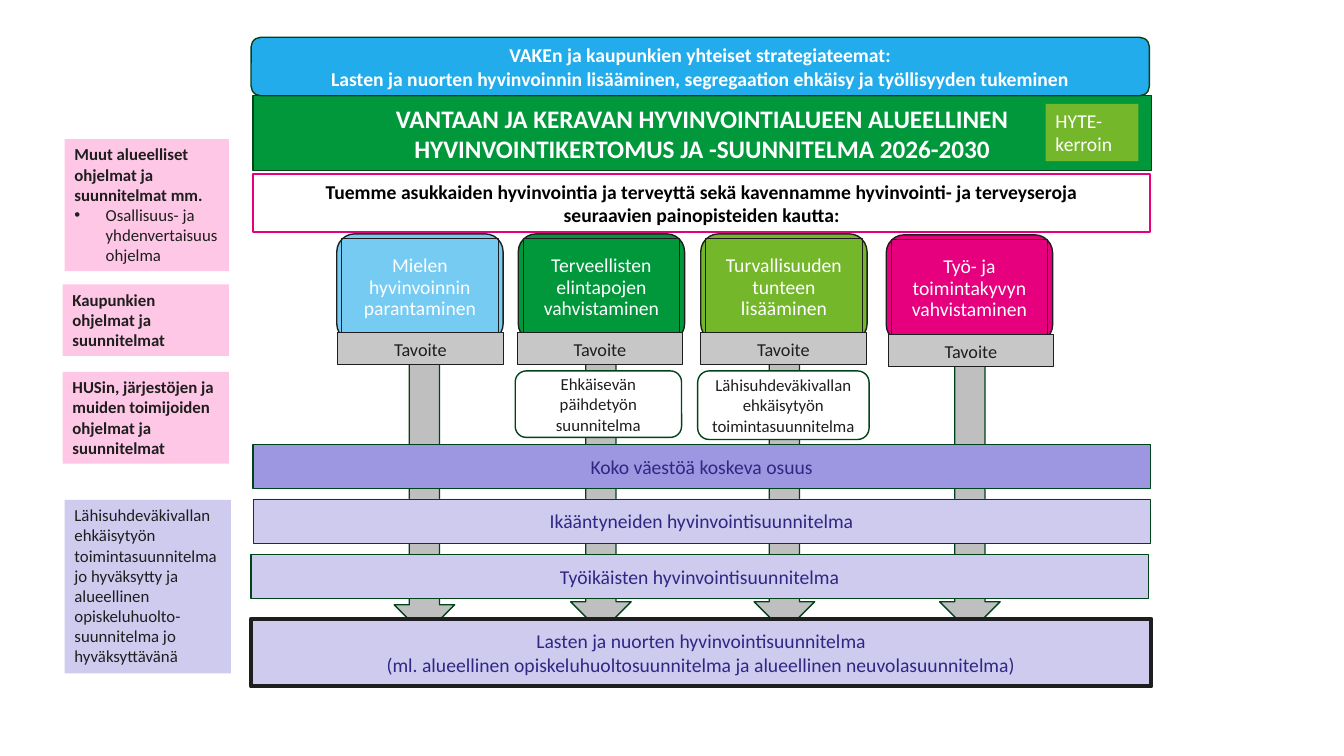
from dataclasses import dataclass

import pptx
import pptx.dml.color
import pptx.enum.shapes
import pptx.enum.text
import pptx.oxml
import pptx.oxml.ns
import pptx.util
from lxml import etree
from pptx.util import Inches

KIND = pptx.enum.shapes.MSO_SHAPE
ALIGN = pptx.enum.text.PP_ALIGN
ANCHOR = pptx.enum.text.MSO_ANCHOR


@dataclass(frozen=True)
class Theme:
    font: str = "Calibri"
    white: str = "FFFFFF"
    black: str = "000000"
    ink: str = "1E1E1E"
    edge: str = "004319"
    sky: str = "76CBF3"
    blue: str = "23ACEC"
    green: str = "00983A"
    lime: str = "74B72B"
    rose: str = "E6007E"
    pink: str = "FFC7E6"
    lilac: str = "CECBEF"
    violet: str = "9D96E0"
    navy: str = "302783"
    silver: str = "C7C7C7"
    grey: str = "BFBFBF"
    head: int = 18
    main: int = 14
    goal: int = 13
    note: int = 12


@dataclass(frozen=True)
class Column:
    text: str
    fill: str
    card: tuple
    goal: tuple
    arrow: tuple


T = Theme()

COLUMNS = [
    Column("Mielen hyvinvoinnin parantaminen", T.sky,
           (3.34, 2.32), (3.35, 3.3), (3.91, 3.43)),
    Column("Terveellisten elintapojen vahvistaminen", T.green,
           (5.14, 2.32), (5.13, 3.3), (5.66, 3.4)),
    Column("Turvallisuuden tunteen lisääminen", T.lime,
           (6.95, 2.32), (6.95, 3.3), (7.48, 3.4)),
    Column("Työ- ja toimintakyvyn vahvistaminen", T.rose,
           (8.79, 2.33), (8.81, 3.32), (9.32, 3.4)),
]

PLANS = [
    ("Ehkäisevän päihdetyön suunnitelma", (5.11, 3.68, 1.65, 0.66)),
    ("Lähisuhdeväkivallan ehkäisytyön toimintasuunnitelma",
     (6.92, 3.68, 1.7, 0.68)),
]

BARS = [
    ("Koko väestöä koskeva osuus", (2.51, 4.41, 8.9, 0.44),
     T.violet, T.edge, 1),
    ("Ikääntyneiden hyvinvointisuunnitelma", (2.51, 4.95, 8.9, 0.44),
     T.lilac, T.edge, 0.25),
    ("Työikäisten hyvinvointisuunnitelma", (2.49, 5.5, 8.9, 0.44),
     T.lilac, T.edge, 1),
    ("Lasten ja nuorten hyvinvointisuunnitelma\n(ml. alueellinen "
     "opiskeluhuoltosuunnitelma ja alueellinen neuvolasuunnitelma)",
     (2.49, 6.14, 8.93, 0.67), T.lilac, T.ink, 3),
]

NOTES = [
    ("Muut alueelliset ohjelmat ja suunnitelmat mm.",
     (0.64, 1.38, 1.63, 1.31), T.pink, True),
    ("Kaupunkien ohjelmat ja suunnitelmat",
     (0.62, 2.82, 1.65, 0.71), T.pink, True),
    ("HUSin, järjestöjen ja muiden toimijoiden ohjelmat ja suunnitelmat",
     (0.62, 3.69, 1.65, 0.91), T.pink, True),
    ("Lähisuhdeväkivallan ehkäisytyön toimintasuunnitelma jo hyväksytty "
     "ja alueellinen opiskeluhuolto-suunnitelma jo hyväksyttävänä",
     (0.64, 4.96, 1.65, 1.72), T.lilac, False),
]


def tint(name):
    return pptx.dml.color.RGBColor.from_string(name)


def paint(shape, fill=None, line=None, width=1):
    if fill:
        shape.fill.solid()
        shape.fill.fore_color.rgb = tint(fill)
    else:
        shape.fill.background()
    if line:
        shape.line.color.rgb = tint(line)
        shape.line.width = pptx.util.Pt(width)
    else:
        shape.line.fill.background()


def block(shapes, kind, box, fill=None, line=None, width=1):
    shape = shapes.add_shape(kind, *map(Inches, box))
    shape.shadow.inherit = False
    paint(shape, fill, line, width)
    return shape


def style(para, size, color, bold=False, align=ALIGN.CENTER):
    para.alignment = align
    para.font.name = T.font
    para.font.size = pptx.util.Pt(size)
    para.font.bold = bold
    para.font.color.rgb = tint(color)


def write(shape, text, size, color, bold=False, align=ALIGN.CENTER,
          anchor=ANCHOR.MIDDLE):
    frame = shape.text_frame
    frame.word_wrap = True
    frame.auto_size = pptx.enum.text.MSO_AUTO_SIZE.NONE
    frame.vertical_anchor = anchor
    para = frame.paragraphs[0]
    for row, line in enumerate(text.split("\n")):
        if row:
            para.add_line_break()
        para.add_run().text = line
    style(para, size, color, bold, align)
    return para


def headline(slide, text, box):
    title = slide.shapes.title
    title.left, title.top, title.width, title.height = map(Inches, box)
    geom = etree.SubElement(title.element.spPr,
                            pptx.oxml.ns.qn("a:prstGeom"), prst="roundRect")
    etree.SubElement(geom, pptx.oxml.ns.qn("a:avLst"))
    paint(title, T.green, T.edge)
    write(title, text, T.head, T.white, True)


def bullet(shape, text):
    para = shape.text_frame.add_paragraph()
    props = para._p.get_or_add_pPr()
    props.set("marL", str(Inches(0.31)))
    props.set("indent", str(Inches(-0.31)))
    etree.SubElement(props, pptx.oxml.ns.qn("a:buFont"), typeface="Arial")
    etree.SubElement(props, pptx.oxml.ns.qn("a:buChar"), char="•")
    para.add_run().text = text
    style(para, T.note, T.ink, align=ALIGN.LEFT)


def card(slide, col):
    left, top = col.card
    group = slide.shapes.add_group_shape()
    block(group.shapes, KIND.ROUNDED_RECTANGLE, (left, top, 1.65, 1.07),
          col.fill, T.ink)
    label = block(group.shapes, KIND.RECTANGLE,
                  (left + 0.05, top + 0.05, 1.55, 0.97), None, T.ink, 0.75)
    frame = label.text_frame
    frame.margin_left = frame.margin_right = Inches(0.05)
    write(label, col.text, T.main, T.white).line_spacing = 0.9


def note(slide, text, box, fill, bold, size=T.note, color=T.ink):
    shape = block(slide.shapes, KIND.RECTANGLE, box, fill)
    write(shape, text, size, color, bold, ALIGN.LEFT, ANCHOR.TOP)
    return shape


def main():
    deck = pptx.Presentation()
    deck.slide_width, deck.slide_height = Inches(13.33), Inches(7.5)
    slide = deck.slides.add_slide(deck.slide_layouts[5])
    shapes = slide.shapes

    headline(slide, "VANTAAN JA KERAVAN HYVINVOINTIALUEEN ALUEELLINEN "
             "HYVINVOINTIKERTOMUS JA -SUUNNITELMA 2026-2030",
             (2.51, 0.95, 8.91, 0.74))
    theme = block(shapes, KIND.ROUNDED_RECTANGLE, (2.49, 0.37, 8.91, 0.58),
                  T.blue, T.edge)
    write(theme, "VAKEn ja kaupunkien yhteiset strategiateemat:\n"
          "Lasten ja nuorten hyvinvoinnin lisääminen, segregaation ehkäisy "
          "ja työllisyyden tukeminen", T.main, T.white, True)
    note(slide, "HYTE-kerroin", (10.37, 1.03, 0.92, 0.57), T.lime, False,
         T.main, T.white)
    focus = block(shapes, KIND.RECTANGLE, (2.51, 1.73, 8.9, 0.57),
                  None, T.rose, 1.5)
    write(focus, "Tuemme asukkaiden hyvinvointia ja terveyttä sekä "
          "kavennamme hyvinvointi- ja terveyseroja\n"
          "seuraavien painopisteiden kautta:", T.main, T.black, True)

    for col in COLUMNS:
        block(shapes, KIND.DOWN_ARROW, (*col.arrow, 0.6, 2.87),
              T.grey, T.edge)
        card(slide, col)
        goal = block(shapes, KIND.RECTANGLE, (*col.goal, 1.64, 0.32),
                     T.silver, T.ink, 0.75)
        write(goal, "Tavoite", T.goal, T.ink)
    for text, box in PLANS:
        plan = block(shapes, KIND.ROUNDED_RECTANGLE, box, T.white, T.edge)
        write(plan, text, T.note, T.ink)
    for text, box, fill, line, width in BARS:
        bar = block(shapes, KIND.RECTANGLE, box, fill, line, width)
        write(bar, text, T.main, T.navy)
    sides = [note(slide, *item) for item in NOTES]
    bullet(sides[0], "Osallisuus- ja yhdenvertaisuusohjelma")

    deck.save("out.pptx")


if __name__ == "__main__":
    main()
